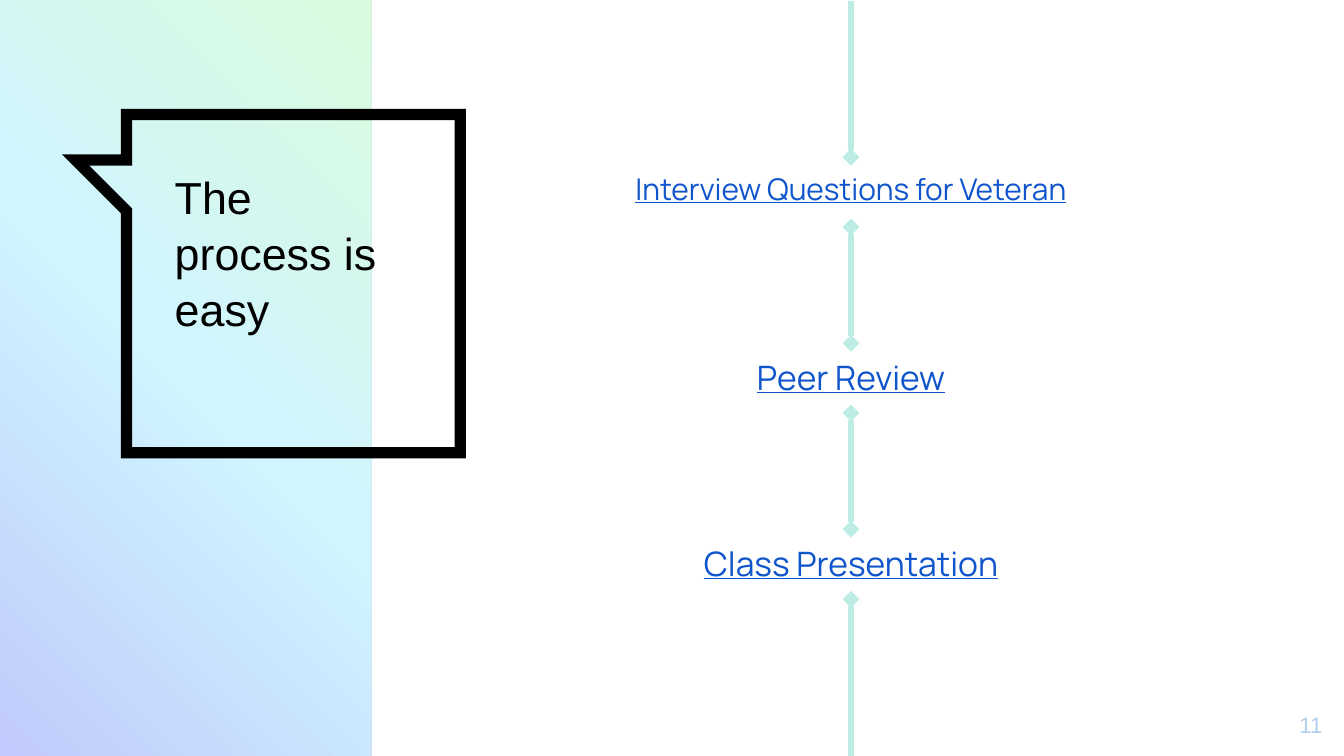
"""Build a slide with a speech-bubble title and a vertical three-step timeline."""
from copy import deepcopy
from dataclasses import dataclass

from lxml.etree import SubElement
from pptx import Presentation
from pptx.dml.color import RGBColor
from pptx.enum.shapes import MSO_CONNECTOR as Connector, MSO_SHAPE as Shape
from pptx.enum.text import MSO_ANCHOR as Anchor, MSO_AUTO_SIZE as AutoSize, PP_ALIGN as Align
from pptx.oxml.ns import qn
from pptx.slide import Slide
from pptx.text.text import TextFrame
from pptx.util import Pt

BLACK = RGBColor(0x00, 0x00, 0x00)
LINK_BLUE = RGBColor(0x11, 0x55, 0xCC)
MINT = RGBColor(0xBD, 0xEC, 0xE5)
PALE_BLUE = RGBColor(0xAF, 0xCF, 0xEC)
BAND_STOPS = (
    (0, RGBColor(0xC0, 0xCA, 0xFC)),
    (0.5, RGBColor(0xD0, 0xF5, 0xFF)),
    (1, RGBColor(0xDA, 0xFB, 0xDD)),
)

SLIDE_WIDTH, SLIDE_HEIGHT = 720, 405
TIMELINE_X = 455.9
STEP_TOP, STEP_PITCH, STEP_HEIGHT = 84.2, 99.7, 37.4
BUBBLE = ((67.8, 61.4), (246.6, 61.4), (246.6, 242.5), (67.8, 242.5),
          (67.8, 113), (40.5, 85.7), (67.8, 85.7))


@dataclass(frozen=True)
class Step:
    label: str
    width: float
    size: float


@dataclass(frozen=True)
class Style:
    font: str
    size: float
    color: RGBColor
    align: Align
    underline: bool = False


STEPS = (
    Step("Interview Questions for Veteran", 246.2, 16),
    Step("Peer Review", 178.6, 18),
    Step("Class Presentation", 178.6, 18),
)


def write_text(frame: TextFrame, text: str, style: Style) -> None:
    frame.text = text
    frame.word_wrap = True
    frame.auto_size = AutoSize.NONE
    frame.vertical_anchor = Anchor.TOP
    frame.margin_left = frame.margin_right = Pt(7.2)
    frame.margin_top = frame.margin_bottom = Pt(7.2)
    para = frame.paragraphs[0]
    para.alignment = style.align
    font = para.runs[0].font
    font.name, font.size = style.font, Pt(style.size)
    font.color.rgb = style.color
    font.underline = style.underline


def add_label(slide: Slide, left: float, top: float, width: float, height: float,
              text: str, style: Style) -> None:
    box = slide.shapes.add_textbox(Pt(left), Pt(top), Pt(width), Pt(height))
    write_text(box.text_frame, text, style)


def add_band(slide: Slide) -> None:
    band = slide.shapes.add_shape(Shape.RECTANGLE, 0, 0, Pt(198.8), Pt(SLIDE_HEIGHT))
    band.shadow.inherit = False
    band.line.fill.background()
    band.fill.gradient()
    band.fill.gradient_angle = 45
    stop_list = band.element.spPr.find(qn("a:gradFill")).find(qn("a:gsLst"))
    stop_list.append(deepcopy(stop_list[0]))
    for stop, (position, color) in zip(band.fill.gradient_stops, BAND_STOPS):
        stop.position = position
        stop.color.rgb = color


def add_bubble(slide: Slide) -> None:
    points = [(Pt(x), Pt(y)) for x, y in BUBBLE]
    builder = slide.shapes.build_freeform(*points[0])
    builder.add_line_segments(points[1:], close=True)
    bubble = builder.convert_to_shape()
    bubble.shadow.inherit = False
    bubble.fill.background()
    bubble.line.color.rgb = BLACK
    bubble.line.width = Pt(6)
    SubElement(bubble.line._get_or_add_ln(), qn("a:miter"), lim="800000")


def add_link(slide: Slide, top: float, bottom: float, head: bool, tail: bool) -> None:
    link = slide.shapes.add_connector(
        Connector.STRAIGHT, Pt(TIMELINE_X), Pt(top), Pt(TIMELINE_X), Pt(bottom))
    link.line.color.rgb = MINT
    link.line.width = Pt(3)
    line = link.line._get_or_add_ln()
    for tag, shown in (("a:headEnd", head), ("a:tailEnd", tail)):
        if shown:
            SubElement(line, qn(tag), type="diamond")
    SubElement(link.element.spPr, qn("a:effectLst"))


def add_timeline(slide: Slide) -> None:
    link_top = 0.7
    for index, step in enumerate(STEPS):
        top = STEP_TOP + index * STEP_PITCH
        add_link(slide, link_top, top, head=index > 0, tail=True)
        style = Style("Manrope", step.size, LINK_BLUE, Align.CENTER, underline=True)
        add_label(slide, TIMELINE_X - step.width / 2, top, step.width, STEP_HEIGHT,
                  step.label, style)
        link_top = top + STEP_HEIGHT
    add_link(slide, link_top, SLIDE_HEIGHT, head=True, tail=False)


def place_title(slide: Slide) -> None:
    title = slide.shapes.title
    title.left, title.top, title.width, title.height = Pt(86.4), Pt(82.8), Pt(144.7), Pt(150.5)
    write_text(title.text_frame, "The process is easy", Style("Arial", 24, BLACK, Align.LEFT))
    title.text_frame.paragraphs[0].line_spacing = 1.04
    title.element.getparent().append(title.element)


def main() -> None:
    deck = Presentation()
    deck.slide_width, deck.slide_height = Pt(SLIDE_WIDTH), Pt(SLIDE_HEIGHT)
    slide = deck.slides.add_slide(deck.slide_layouts.get_by_name("Title Only"))
    add_band(slide)
    add_bubble(slide)
    place_title(slide)
    add_timeline(slide)
    add_label(slide, 672.5, 373.7, 43.2, 31, "11", Style("Arial", 12, PALE_BLUE, Align.RIGHT))
    deck.save("out.pptx")


if __name__ == "__main__":
    main()
